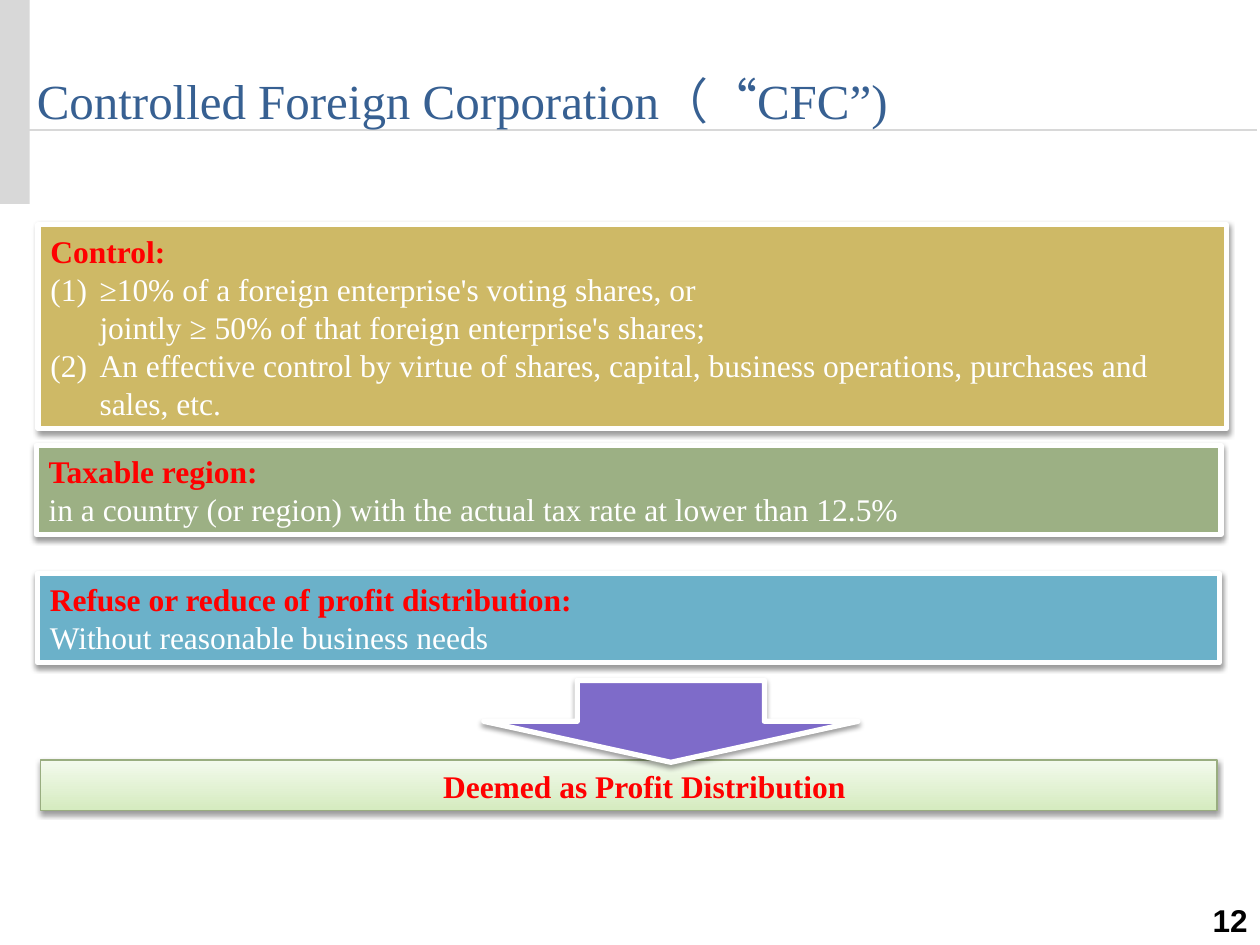
from dataclasses import dataclass

from lxml import etree
from pptx import Presentation
from pptx.dml.color import RGBColor
from pptx.enum.shapes import MSO_CONNECTOR, MSO_SHAPE
from pptx.enum.text import MSO_ANCHOR, PP_ALIGN
from pptx.oxml.ns import qn
from pptx.util import Pt

RECTANGLE, DOWN_ARROW = MSO_SHAPE.RECTANGLE, MSO_SHAPE.DOWN_ARROW
STRAIGHT = MSO_CONNECTOR.STRAIGHT
MIDDLE = MSO_ANCHOR.MIDDLE
LEFT, CENTER, RIGHT = PP_ALIGN.LEFT, PP_ALIGN.CENTER, PP_ALIGN.RIGHT


@dataclass(frozen=True)
class Theme:
    serif: str = "Times New Roman"
    sans: str = "Arial"
    title_size: float = 28
    body_size: float = 18
    border: float = 3
    hairline: float = 0.75
    indent: float = 28
    title: str = "376092"
    heading: str = "FF0000"
    white: str = "FFFFFF"
    black: str = "000000"
    gray: str = "D8D8D8"
    gold: str = "CEB966"
    green: str = "9CB084"
    blue: str = "6BB1C9"
    purple: str = "7E6BC9"
    result: tuple = ("D5EBBF", "F3FAED")
    result_border: str = "99AD80"


class SlideBuilder:
    def __init__(self, page, theme):
        self.page = page
        self.theme = theme

    def heading(self, text, **formats):
        return {"text": text, "color": self.theme.heading, "bold": True, **formats}

    def body(self, text, **formats):
        return {"text": text, "color": self.theme.white, **formats}

    def fill_text(self, box, paragraphs, extra_left=0):
        frame = box.text_frame
        settings = {"word_wrap": True, "vertical_anchor": MIDDLE,
                    "margin_left": Pt(7.2 + extra_left), "margin_right": Pt(7.2),
                    "margin_top": Pt(3.6), "margin_bottom": Pt(3.6)}
        for name, value in settings.items():
            setattr(frame, name, value)
        for index, content in enumerate(paragraphs):
            para = frame.paragraphs[0] if index == 0 else frame.add_paragraph()
            para.alignment = content.get("align", LEFT)
            properties = para._p.get_or_add_pPr()
            for name in ("marL", "indent"):
                if name in content:
                    properties.set(name, str(Pt(content[name])))
            span = para.add_run()
            span.text = content["text"]
            formats = {"name": content.get("font", self.theme.serif),
                       "size": Pt(content.get("size", self.theme.body_size)),
                       "bold": content.get("bold", False)}
            for name, value in formats.items():
                setattr(span.font, name, value)
            span.font.color.rgb = RGBColor.from_string(content["color"])

    def text(self, bounds, content):
        box = self.page.shapes.add_textbox(*map(Pt, bounds))
        self.fill_text(box, [content])

    def shape(self, kind, bounds, fill, border=None, width=0):
        box = self.page.shapes.add_shape(kind, *map(Pt, bounds))
        box.shadow.inherit = False
        if isinstance(fill, tuple):
            box.fill.gradient()
            box.fill.gradient_angle = 90
            for stop, color in zip(box.fill.gradient_stops, fill):
                stop.color.rgb = RGBColor.from_string(color)
        else:
            box.fill.solid()
            box.fill.fore_color.rgb = RGBColor.from_string(fill)
        if border:
            box.line.color.rgb = RGBColor.from_string(border)
            box.line.width = Pt(width)
            self.drop_shadow(box)
        else:
            box.line.fill.background()
        return box

    def drop_shadow(self, box):
        effects = box._element.spPr.find(qn("a:effectLst"))
        shadow = etree.SubElement(
            effects, qn("a:outerShdw"), blurRad=str(Pt(3.1)), dist=str(Pt(1.6)),
            dir="5400000", rotWithShape="0")
        color = etree.SubElement(shadow, qn("a:srgbClr"), val=self.theme.black)
        etree.SubElement(color, qn("a:alpha"), val="38000")

    def panel(self, bounds, fill, paragraphs):
        box = self.shape(RECTANGLE, bounds, fill, self.theme.white, self.theme.border)
        self.fill_text(box, paragraphs)

    def rule(self, start, end):
        line = self.page.shapes.add_connector(STRAIGHT, *map(Pt, start + end))
        line.line.color.rgb = RGBColor.from_string(self.theme.gray)
        line.line.width = Pt(1)
        etree.SubElement(line._element.spPr, qn("a:effectLst"))


def main():
    theme = Theme()
    deck = Presentation()
    deck.slide_width, deck.slide_height = Pt(720), Pt(540)
    slide = SlideBuilder(deck.slides.add_slide(deck.slide_layouts[6]), theme)

    slide.rule((3, 74.2), (718.5, 74.2))
    slide.shape(RECTANGLE, (0, 0, 17, 116.6), theme.gray)
    slide.text((14, 31.7, 632, 51), {
        "text": "Controlled Foreign Corporation（“CFC”)",
        "size": theme.title_size, "color": theme.title})

    numbered = {"marL": theme.indent, "indent": -theme.indent}
    slide.panel((21.8, 128.5, 679, 116.6), theme.gold, [
        slide.heading("Control:"),
        slide.body("(1)\t≥10% of a foreign enterprise's voting shares, or", **numbered),
        slide.body("jointly ≥ 50% of that foreign enterprise's shares;",
                   marL=theme.indent),
        slide.body("(2)\tAn effective control by virtue of shares, capital, business "
                   "operations, purchases and sales, etc.", **numbered)])
    slide.panel((20.7, 254.5, 677, 51), theme.green, [
        slide.heading("Taxable region:"),
        slide.body("in a country (or region) with the actual tax rate "
                   "at lower than 12.5%")])
    slide.panel((21.4, 327.7, 675.3, 51), theme.blue, [
        slide.heading("Refuse or reduce of profit distribution:"),
        slide.body("Without reasonable business needs")])

    result = slide.shape(RECTANGLE, (23, 434.3, 672.5, 29), theme.result,
                         theme.result_border, theme.hairline)
    slide.fill_text(result, [slide.heading("Deemed as Profit Distribution",
                                           align=CENTER)], extra_left=18)
    slide.shape(DOWN_ARROW, (276.5, 388.8, 213.8, 46.8), theme.purple,
                theme.white, theme.border)
    slide.text((599, 511, 121, 29), {
        "text": "12", "font": theme.sans, "color": theme.black,
        "bold": True, "align": RIGHT})

    deck.save("out.pptx")


if __name__ == "__main__":
    main()
